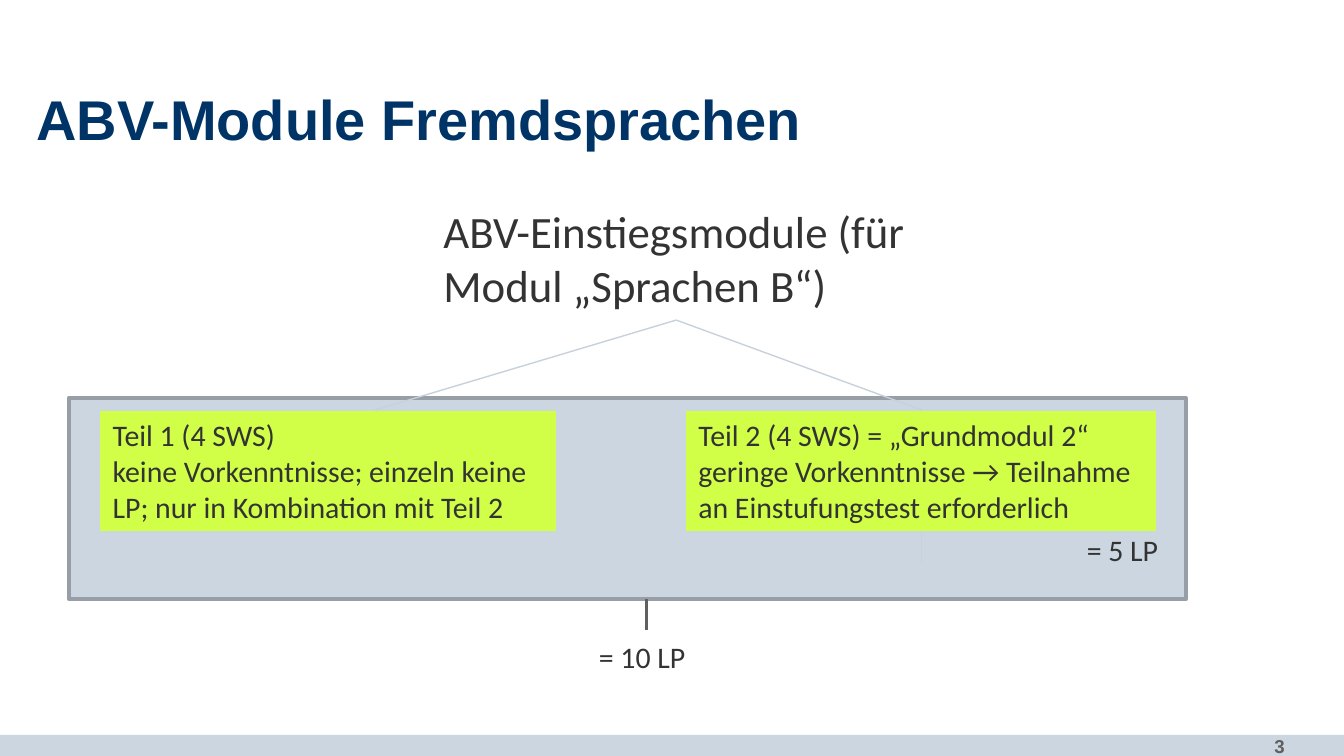
from dataclasses import dataclass

from lxml.etree import SubElement
from pptx import Presentation
from pptx.dml.color import RGBColor as Color
from pptx.enum.shapes import MSO_CONNECTOR as Connector, MSO_SHAPE as Preset
from pptx.enum.text import MSO_ANCHOR as Anchor, PP_ALIGN as Align
from pptx.oxml.ns import qn
from pptx.shapes.autoshape import Shape
from pptx.slide import Slide
from pptx.util import Cm, Pt


@dataclass(frozen=True)
class Theme:
    navy: str = "003366"
    body: str = "333333"
    number: str = "5F5F5F"
    panel: str = "CCD6E0"
    panel_edge: str = "979EA6"
    lime: str = "D1FF47"
    branch: str = "C7D1DC"
    stem: str = "606060"
    heading_font: str = "Arial"
    body_font: str = "Calibri"
    title_size: float = 30
    heading_size: float = 24
    text_size: float = 16
    number_size: float = 10
    thin: float = 0.75
    thick: float = 2


THEME = Theme()


@dataclass(frozen=True)
class Area:
    left: float
    top: float
    width: float
    height: float

    @property
    def bottom(self) -> float:
        return self.top + self.height

    def lengths(self) -> tuple[Cm, Cm, Cm, Cm]:
        return Cm(self.left), Cm(self.top), Cm(self.width), Cm(self.height)


@dataclass(frozen=True)
class TextStyle:
    size: float
    color: str = THEME.body
    font: str = THEME.body_font
    bold: bool = False
    align: Align = Align.LEFT


@dataclass(frozen=True)
class Label:
    text: str
    area: Area
    style: TextStyle


@dataclass(frozen=True)
class Module:
    text: str
    area: Area


@dataclass(frozen=True)
class Line:
    start: tuple[float, float]
    end: tuple[float, float]
    color: str = THEME.branch
    width: float = THEME.thin


BODY = TextStyle(THEME.text_size)
HEADING = TextStyle(THEME.heading_size)
TITLE = TextStyle(THEME.title_size, THEME.navy, THEME.heading_font, True)
NUMBER = TextStyle(THEME.number_size, THEME.number, THEME.heading_font, True, Align.RIGHT)

FOOTER = Area(0, 13.89, 25.4, 0.4)
FRAME = Area(1.3, 7.52, 21.11, 3.81)
MODULE_TOP, MODULE_HEIGHT = 7.75, 2.31
APEX = (12.78, 6.05)
LEFT_X, RIGHT_X, STEM_X = 7.09, 17.42, 12.22

MODULES = [
    Module(
        "Teil 1 (4 SWS)\nkeine Vorkenntnisse; einzeln keine LP; nur in Kombination mit Teil 2",
        Area(1.88, MODULE_TOP, 8.64, MODULE_HEIGHT),
    ),
    Module(
        "Teil 2 (4 SWS) = „Grundmodul 2“\ngeringe Vorkenntnisse → Teilnahme an Einstufungstest erforderlich",
        Area(12.95, MODULE_TOP, 8.92, MODULE_HEIGHT),
    ),
]
MODULE_BOTTOM = MODULES[0].area.bottom

LINES = [
    Line(APEX, (LEFT_X, MODULE_TOP)),
    Line(APEX, (RIGHT_X, MODULE_TOP)),
    Line((RIGHT_X, MODULE_BOTTOM), (RIGHT_X, MODULE_BOTTOM + 0.56)),
    Line((STEM_X, FRAME.bottom), (STEM_X, FRAME.bottom + 0.58), THEME.stem, THEME.thick),
]

LABELS = [
    Label("3", Area(21.13, 13.77, 3.4, 0.51), NUMBER),
    Label("ABV-Einstiegsmodule (für Modul „Sprachen B“)", Area(8.13, 3.73, 9.3, 2.31), HEADING),
    Label("= 10 LP", Area(11.07, 11.94, 2.26, 0.94), BODY),
    Label("= 5 LP", Area(20.29, 9.93, 2.11, 0.94), BODY),
]


def write(box: Shape, text: str, style: TextStyle) -> None:
    frame = box.text_frame
    frame.word_wrap = True
    frame.vertical_anchor = Anchor.TOP
    frame.text = text
    for para in frame.paragraphs:
        para.alignment = style.align
        for span in para.runs:
            span.font.name = style.font
            span.font.size = Pt(style.size)
            span.font.bold = style.bold
            span.font.color.rgb = Color.from_string(style.color)


def draw_label(page: Slide, label: Label) -> Shape:
    box = page.shapes.add_textbox(*label.area.lengths())
    write(box, label.text, label.style)
    return box


def draw_title(page: Slide) -> None:
    box = draw_label(page, Label("ABV-Module Fremdsprachen", Area(0.69, 1.98, 24, 0.89), TITLE))
    frame = box.text_frame
    frame.vertical_anchor = Anchor.BOTTOM
    frame.margin_left = frame.margin_right = frame.margin_top = frame.margin_bottom = 0


def draw_rectangle(page: Slide, area: Area, fill: str, edge: str = "", width: float = 0) -> Shape:
    box = page.shapes.add_shape(Preset.RECTANGLE, *area.lengths())
    box.shadow.inherit = False
    box.fill.solid()
    box.fill.fore_color.rgb = Color.from_string(fill)
    if edge:
        box.line.color.rgb = Color.from_string(edge)
        box.line.width = Pt(width)
    else:
        box.line.fill.background()
    return box


def draw_module(page: Slide, module: Module) -> None:
    box = draw_rectangle(page, module.area, THEME.lime, THEME.panel, THEME.thin)
    write(box, module.text, BODY)


def draw_line(page: Slide, line: Line) -> None:
    ends = [Cm(value) for value in (*line.start, *line.end)]
    connector = page.shapes.add_connector(Connector.STRAIGHT, *ends)
    connector.line.color.rgb = Color.from_string(line.color)
    connector.line.width = Pt(line.width)
    SubElement(connector._element.spPr, qn("a:effectLst"))


def main() -> None:
    deck = Presentation()
    deck.slide_width, deck.slide_height = Cm(25.4), Cm(14.29)
    page = deck.slides.add_slide(deck.slide_layouts[6])
    draw_rectangle(page, FOOTER, THEME.panel)
    draw_title(page)
    draw_rectangle(page, FRAME, THEME.panel, THEME.panel_edge, THEME.thick)
    for module in MODULES:
        draw_module(page, module)
    for line in LINES:
        draw_line(page, line)
    for label in LABELS:
        draw_label(page, label)
    deck.save("out.pptx")


if __name__ == "__main__":
    main()
